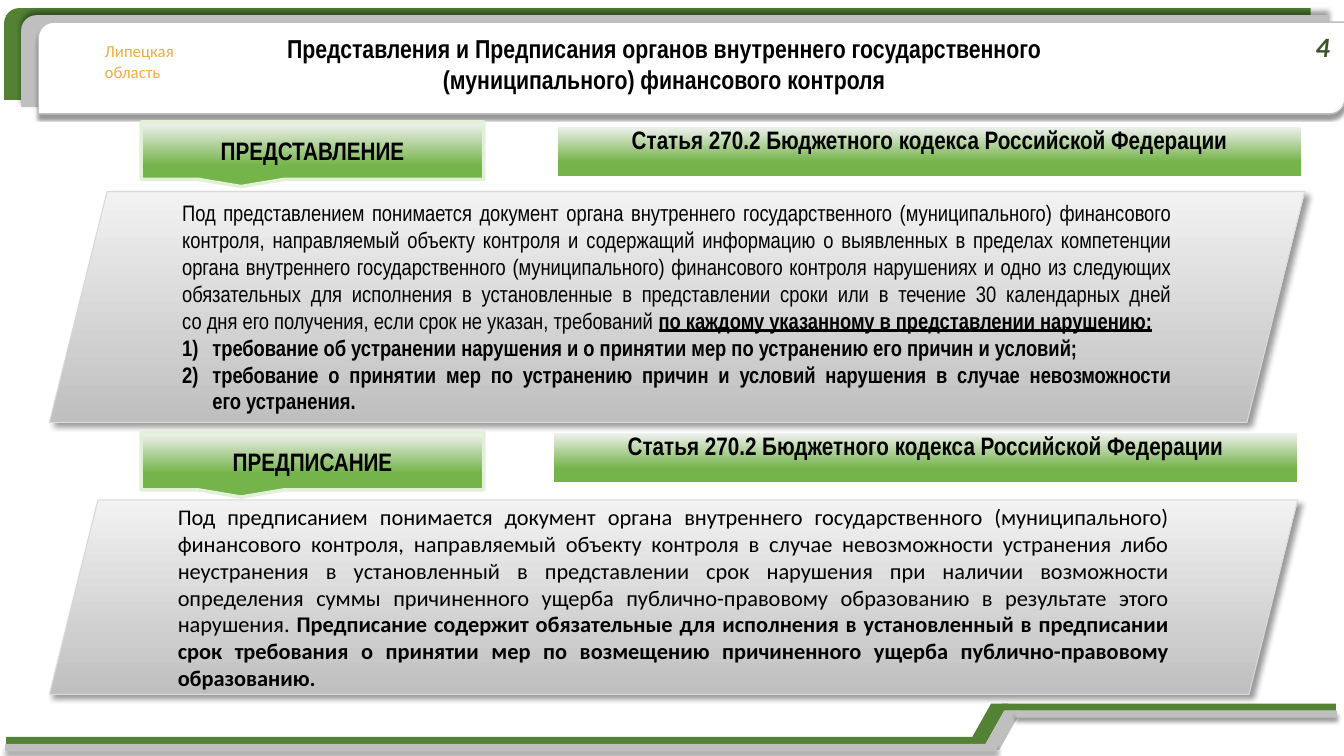
from pptx import Presentation
from pptx.dml.color import RGBColor
from pptx.enum import shapes, text
from pptx.oxml import ns, parse_xml
from pptx.util import Inches, Pt

COLOURS = {
    "dark green": "548235", "green": "75B44A", "pale green": "E2F0D9",
    "number": "385723", "orange": "F2AC44", "black": "000000", "white": "FFFFFF",
    "grey": "BFBFBF", "mid grey": "D9D9D9", "light grey": "F2F2F2",
}
NARROW, CALIBRI = "Arial Narrow", "Calibri"
SHAPE = shapes.MSO_SHAPE
CENTER, JUSTIFY = text.PP_ALIGN.CENTER, text.PP_ALIGN.JUSTIFY
ARTICLE = "Статья 270.2 Бюджетного кодекса Российской Федерации"


def rgb(name):
    return RGBColor.from_string(COLOURS[name])


def lengths(*values):
    return [Inches(value) for value in values]


def add_shadow(shape, blur, distance, angle):
    """Give the shape a soft black outer shadow (points and degrees)."""
    properties = shape._element.spPr
    for effects in properties.findall(ns.qn("a:effectLst")):
        properties.remove(effects)
    properties.append(parse_xml(
        f'<a:effectLst {ns.nsdecls("a")}><a:outerShdw blurRad="{Pt(blur)}" '
        f'dist="{Pt(distance)}" dir="{angle * 60000}" algn="ctr" rotWithShape="0">'
        '<a:srgbClr val="000000"><a:alpha val="40000"/></a:srgbClr>'
        '</a:outerShdw></a:effectLst>'))


def fill_gradient(fill, colour, start):
    """Fade from the colour at the bottom to light grey at the top."""
    fill.gradient()
    fill.gradient_angle = 90
    ends = ((colour, start), ("light grey", 1))
    for stop, (name, position) in zip(fill.gradient_stops, ends):
        stop.color.rgb = rgb(name)
        stop.position = position


def style_shape(shape, fill=None, line=None, width=1.0, shadow=None):
    shape.shadow.inherit = False
    if fill:
        shape.fill.solid()
        shape.fill.fore_color.rgb = rgb(fill)
    if line:
        shape.line.color.rgb = rgb(line)
        shape.line.width = Pt(width)
    else:
        shape.line.fill.background()
    if shadow:
        add_shadow(shape, *shadow)


def add_panel(page, kind, place, **style):
    shape = page.shapes.add_shape(kind, *lengths(*place))
    style_shape(shape, **style)
    return shape


def add_slant(page, points):
    """Return a freeform through the given points in inches."""
    first, *rest = [tuple(lengths(*point)) for point in points]
    builder = page.shapes.build_freeform(*first)
    builder.add_line_segments(rest, close=True)
    return builder.convert_to_shape()


def add_span(para, words, size, font=NARROW, colour="black",
             bold=None, underline=None, italic=None):
    for index, line in enumerate(words.split("\n")):
        if index:
            para.add_line_break()
        span = para.add_run()
        span.text = line
        span.font.size = Pt(size)
        span.font.name = font
        span.font.color.rgb = rgb(colour)
        span.font.bold = bold
        span.font.underline = underline
        span.font.italic = italic


def write_lines(frame, lines, size, alignment=None, **style):
    """Write one paragraph per line, all in the same style."""
    frame.word_wrap = True
    for index, line in enumerate(lines):
        para = frame.add_paragraph() if index else frame.paragraphs[0]
        para.alignment = alignment
        add_span(para, line, size, **style)


def number_paragraph(para):
    properties = para._p.get_or_add_pPr()
    properties.set("marL", str(Inches(0.3)))
    properties.set("indent", str(Inches(-0.3)))
    properties.append(parse_xml(
        f'<a:buFont {ns.nsdecls("a")} typeface="+mj-lt"/>'))
    properties.append(parse_xml(
        f'<a:buAutoNum {ns.nsdecls("a")} type="arabicParenR"/>'))


def add_text(page, place, lines, size, anchor=text.MSO_ANCHOR.TOP, **style):
    box = page.shapes.add_textbox(*lengths(*place))
    box.text_frame.vertical_anchor = anchor
    write_lines(box.text_frame, lines, size, **style)


def add_frame(page):
    """Draw the layered header and the stepped footer."""
    layers = (
        ("dark green", None, None),
        ("grey", None, (4, 3, 270)),
        ("white", "grey", (2, 3, 90)),
    )
    for step, (fill, line, shadow) in enumerate(layers):
        add_panel(page, SHAPE.ROUND_2_DIAG_RECTANGLE,
                  (0.04 + 0.17 * step, 0.08 + 0.07 * step, 12.96, 0.91),
                  fill=fill, line=line, shadow=shadow)
    bands = (
        ("dark green", 9.61, 6.98, (0.06, 9.72), (9.94, 3.31), None),
        ("grey", 9.74, 7.05, (0.05, 9.84), (10.07, 3.19), (3, 3, 90)),
    )
    for fill, left, top, lower, upper, shadow in bands:
        slant = add_slant(page, ((left, top + 0.39), (left + 0.22, top),
                                 (left + 0.39, top), (left + 0.17, top + 0.39)))
        style_shape(slant, fill=fill)
        for (x, width), y in ((lower, top + 0.33), (upper, top)):
            add_panel(page, SHAPE.RECTANGLE, (x, y, width, 0.07),
                      fill=fill, shadow=shadow)


def add_title(page, lines):
    title = page.shapes.title
    title.left, title.top, title.width, title.height = lengths(1.77, 0.27, 9.63, 0.72)
    page.shapes._spTree.append(title._element)
    frame = title.text_frame
    frame.auto_size = text.MSO_AUTO_SIZE.NONE
    frame.vertical_anchor = text.MSO_ANCHOR.TOP
    write_lines(frame, lines, 18.5, CENTER, bold=True)


def add_heading(page, top, words, start):
    callout = add_panel(page, SHAPE.RECTANGULAR_CALLOUT, (1.4, top, 3.4, 0.57),
                        line="pale green", width=2.5)
    fill_gradient(callout.fill, "green", start)
    callout.text_frame.vertical_anchor = text.MSO_ANCHOR.MIDDLE
    write_lines(callout.text_frame, [words], 18, CENTER, bold=True)


def add_article(page, left, top):
    table = page.shapes.add_table(1, 1, *lengths(left, top, 7.38, 0.5)).table
    table.first_row = table.horz_banding = False
    cell = table.cell(0, 0)
    fill_gradient(cell.fill, "green", 0.29)
    write_lines(cell.text_frame, [ARTICLE], 18, CENTER, bold=True)


def add_definition(page, place, font, plain, strong, underline=None, demands=()):
    """Add a slanted panel: a definition with a bold ending, then numbered demands."""
    panel = add_panel(page, SHAPE.PARALLELOGRAM, place, line="mid grey",
                      width=0.75, shadow=(4, 3, 45))
    fill_gradient(panel.fill, "grey", 0)
    frame = panel.text_frame
    frame.word_wrap = True
    frame.vertical_anchor = text.MSO_ANCHOR.MIDDLE
    frame.margin_left = frame.margin_right = Inches(0.04)
    frame.margin_top = frame.margin_bottom = Inches(0.04)
    para = frame.paragraphs[0]
    para.alignment = JUSTIFY
    add_span(para, plain, 16, font)
    add_span(para, strong, 16, font, bold=True, underline=underline)
    for demand in demands:
        para = frame.add_paragraph()
        number_paragraph(para)
        para.alignment = JUSTIFY
        add_span(para, demand, 16, font, bold=True)


def main():
    deck = Presentation()
    deck.slide_width, deck.slide_height = lengths(13.33, 7.5)
    page = deck.slides.add_slide(deck.slide_layouts[5])
    add_frame(page)
    add_text(page, (0.94, 0.36, 0.91, 0.5), ["Липецкая", "область"], 12,
             font=CALIBRI, colour="orange")
    add_title(page, ["Представления и Предписания органов внутреннего государственного",
                     "(муниципального) финансового контроля"])
    add_heading(page, 1.21, "ПРЕДСТАВЛЕНИЕ", 0.24)
    add_definition(
        page, (0.49, 1.9, 12.45, 2.29), NARROW,
        "Под представлением понимается документ органа внутреннего государственного "
        "(муниципального) финансового контроля, направляемый объекту контроля и содержащий "
        "информацию о выявленных в пределах компетенции органа внутреннего государственного "
        "(муниципального) финансового контроля нарушениях и одно из следующих обязательных "
        "для исполнения в установленные в представлении сроки или в течение 30 календарных "
        "дней\nсо дня его получения, если срок не указан, требований ",
        "по каждому указанному в представлении нарушению:", True,
        ("требование об устранении нарушения и о принятии мер по устранению его причин "
         "и условий;",
         "требование о принятии мер по устранению причин и условий нарушения в случае "
         "невозможности\nего устранения."))
    add_heading(page, 4.29, "ПРЕДПИСАНИЕ", 0.29)
    add_definition(
        page, (0.49, 4.96, 12.38, 1.93), CALIBRI,
        "Под предписанием понимается документ органа внутреннего государственного "
        "(муниципального) финансового контроля, направляемый объекту контроля в случае "
        "невозможности устранения либо неустранения в установленный в представлении срок "
        "нарушения при наличии возможности определения суммы причиненного ущерба "
        "публично-правовому образованию в результате этого нарушения. ",
        "Предписание содержит обязательные для исполнения в установленный в предписании "
        "срок требования о принятии мер по возмещению причиненного ущерба "
        "публично-правовому образованию.")
    add_article(page, 5.53, 1.25)
    add_article(page, 5.49, 4.29)
    add_text(page, (12.95, 0.27, 0.28, 0.37), ["4"], 20, text.MSO_ANCHOR.MIDDLE,
             alignment=CENTER, font=CALIBRI, colour="number", bold=True, italic=True)
    deck.save("out.pptx")


if __name__ == "__main__":
    main()
